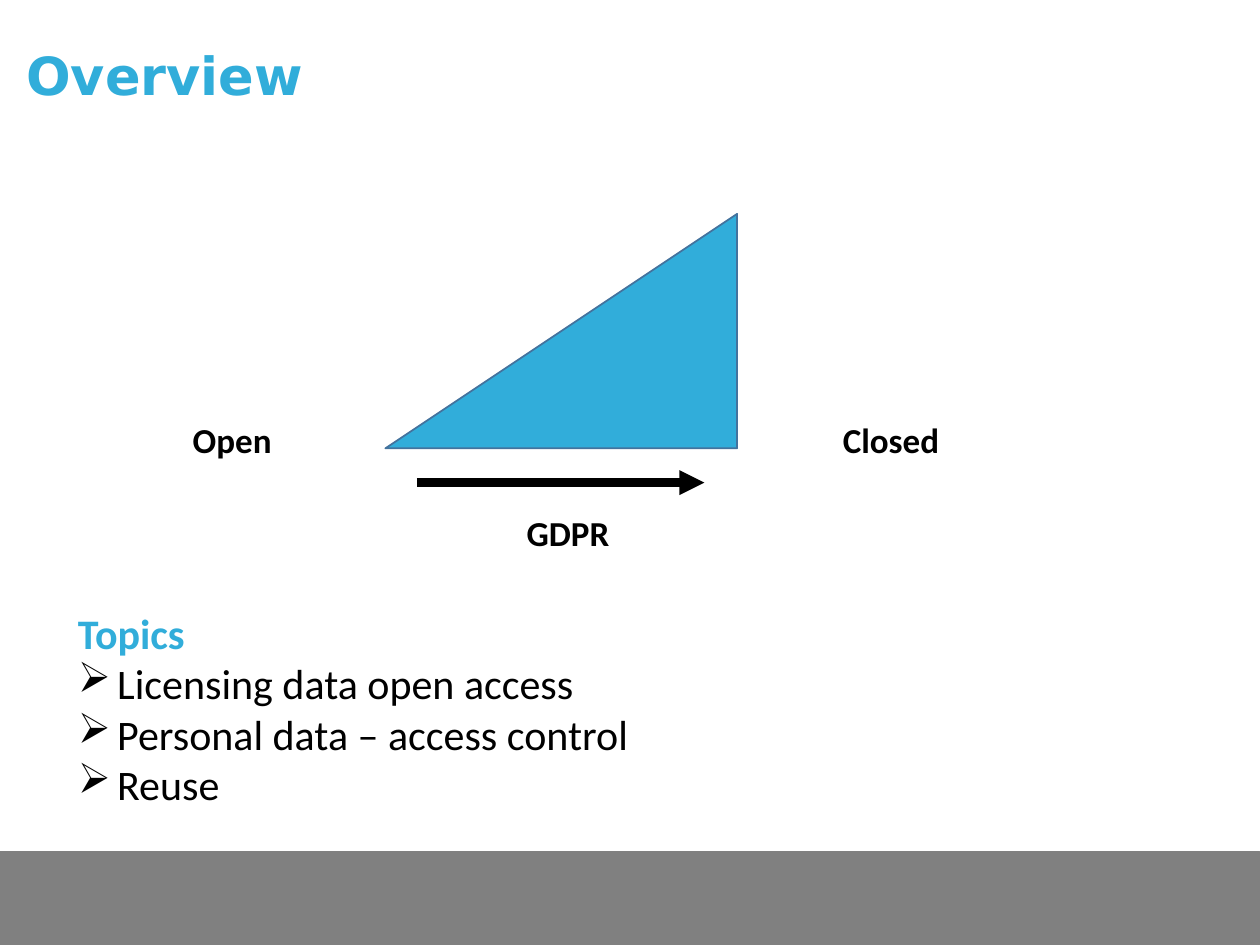
"""Build the overview slide on open and closed data."""
import pptx
import pptx.dml.color
import pptx.enum.shapes
import pptx.enum.text
import pptx.oxml.ns
import pptx.util
from lxml import etree

Pt = pptx.util.Pt
Rgb = pptx.dml.color.RGBColor.from_string
theme = {
    "blue": Rgb("31ADDA"), "edge": Rgb("43739E"),
    "grey": Rgb("808080"), "black": Rgb("000000"),
    "title": Pt(30), "body": Pt(24), "label": Pt(20),
    "head": "DejaVu Sans", "text": "Calibri",
}


def add_text(slide, box, lines, looks):
    """Add a text box whose lines each take a dict of font values."""
    frame = slide.shapes.add_textbox(*map(Pt, box)).text_frame
    frame.word_wrap = True
    for i, (line, look) in enumerate(zip(lines, looks)):
        para = frame.paragraphs[0] if i == 0 else frame.add_paragraph()
        run = para.add_run()
        run.text = line
        run.font.color.rgb = look["color"]
        for name, value in look["font"].items():
            setattr(run.font, name, value)
    return frame


def add_shape(slide, kind, box, fill, edge, width):
    """Add a filled preset shape without a shadow."""
    shape = slide.shapes.add_shape(kind, *map(Pt, box))
    shape.shadow.inherit = False
    shape.fill.solid()
    shape.fill.fore_color.rgb = fill
    shape.line.color.rgb = edge
    shape.line.width = Pt(width)
    return shape


deck = pptx.Presentation()
deck.slide_width, deck.slide_height = Pt(720), Pt(540)
slide = deck.slides.add_slide(deck.slide_layouts[6])
kinds = pptx.enum.shapes.MSO_SHAPE
qn = pptx.oxml.ns.qn

add_shape(slide, kinds.RECTANGLE, (0, 486.5, 720, 53.5),
          theme["grey"], theme["grey"], 0.5)

title = {"color": theme["blue"],
         "font": {"name": theme["head"], "size": theme["title"], "bold": True}}
frame = add_text(slide, (8, 12.5, 705, 65), ["Overview"], [title])
frame.vertical_anchor = pptx.enum.text.MSO_ANCHOR.MIDDLE
frame.paragraphs[0].line_spacing = 0.9

wedge = add_shape(slide, kinds.ISOSCELES_TRIANGLE, (220.2, 122.2, 201, 134),
                  theme["blue"], theme["edge"], 1)
wedge.adjustments[0] = 1

head = {"color": theme["blue"],
        "font": {"name": theme["text"], "size": theme["body"], "bold": True}}
item = {"color": theme["black"],
        "font": {"name": theme["text"], "size": theme["body"], "bold": False}}
topics = ["Topics", "Licensing data open access",
          "Personal data – access control", "Reuse"]
frame = add_text(slide, (37.4, 343.5, 397.5, 124), topics, [head] + [item] * 3)
indent = Pt(22.5)
for para in frame.paragraphs[1:]:
    props = para._p.get_or_add_pPr()
    props.set("marL", str(indent))
    props.set("indent", str(-indent))
    etree.SubElement(props, qn("a:buChar")).set("char", "➢")

label = {"color": theme["black"],
         "font": {"name": theme["text"], "size": theme["label"], "bold": True}}
for word, left, top, width in [("Closed", 474.5, 235.5, 223),
                               ("Open", 103, 235.5, 217.5),
                               ("GDPR", 293.8, 288.7, 108.7)]:
    add_text(slide, (left, top, width, 31.5), [word], [label])

arrow = slide.shapes.add_connector(
    pptx.enum.shapes.MSO_CONNECTOR.STRAIGHT,
    Pt(238.3), Pt(275.8), Pt(402.5), Pt(275.8))
arrow.line.color.rgb = theme["black"]
arrow.line.width = Pt(4.75)
etree.SubElement(arrow.line._get_or_add_ln(), qn("a:tailEnd")).set("type", "triangle")
etree.SubElement(arrow._element.spPr, qn("a:effectLst"))

deck.save("out.pptx")
